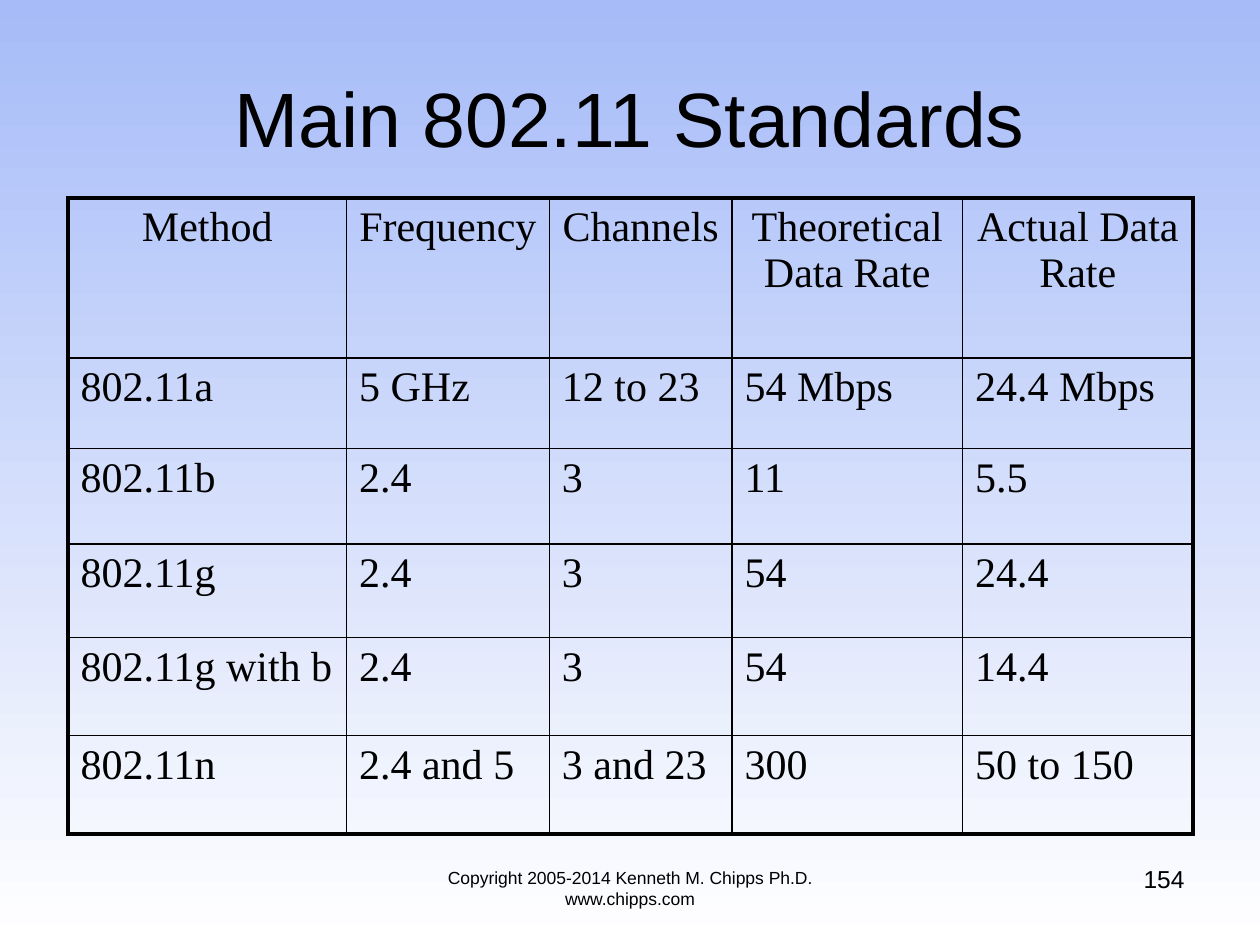
import dataclasses

import pptx
import pptx.dml.color
import pptx.enum.text
import pptx.oxml
import pptx.oxml.ns
import pptx.util

Inches = pptx.util.Inches
Pt = pptx.util.Pt
Align = pptx.enum.text.PP_ALIGN
Anchor = pptx.enum.text.MSO_ANCHOR
Color = pptx.dml.color.RGBColor


@dataclasses.dataclass(frozen=True)
class Theme:
    sky: str = "A6BBF8"
    white: str = "FFFFFF"
    ink: str = "000000"
    sans: str = "Arial"
    serif: str = "Times New Roman"
    title: float = 44
    body: float = 24
    page: float = 14
    foot: float = 10
    thick: float = 2.25
    thin: float = 1


@dataclasses.dataclass(frozen=True)
class Label:
    text: str
    left: float
    top: float
    width: float
    height: float
    size: float
    align: Align
    anchor: Anchor = Anchor.TOP


THEME = Theme()

LABELS = [
    Label("Main 802.11 Standards", 0.5, 0.3, 9, 1.25,
          THEME.title, Align.CENTER, Anchor.MIDDLE),
    Label("154", 7.17, 6.81, 2.33, 0.52, THEME.page, Align.RIGHT),
    Label("Copyright 2005-2014 Kenneth M. Chipps Ph.D. www.chipps.com",
          3, 6.83, 4, 0.52, THEME.foot, Align.CENTER),
]

ROWS = [
    ["Method", "Frequency", "Channels", "Theoretical Data Rate", "Actual Data Rate"],
    ["802.11a", "5 GHz", "12 to 23", "54 Mbps", "24.4 Mbps"],
    ["802.11b", "2.4", "3", "11", "5.5"],
    ["802.11g", "2.4", "3", "54", "24.4"],
    ["802.11g with b", "2.4", "3", "54", "14.4"],
    ["802.11n", "2.4 and 5", "3 and 23", "300", "50 to 150"],
]
WIDTHS = [2.21, 1.61, 1.45, 1.83, 1.83]
HEIGHTS = [1.27, 0.72, 0.76, 0.74, 0.78, 0.78]


def style(para, face: str, size: float, align: Align) -> None:
    para.alignment = align
    para.font.name = face
    para.font.size = Pt(size)
    para.font.color.rgb = Color.from_string(THEME.ink)


def add_label(slide, label: Label) -> None:
    box = slide.shapes.add_textbox(Inches(label.left), Inches(label.top),
                                   Inches(label.width), Inches(label.height))
    frame = box.text_frame
    frame.word_wrap = True
    frame.vertical_anchor = label.anchor
    frame.text = label.text
    style(frame.paragraphs[0], THEME.sans, label.size, label.align)


def add_edge(cell, side: str, outer: bool) -> None:
    """Draw one border of a cell; side is L, R, T or B."""
    width = Pt(THEME.thick if outer else THEME.thin)
    cell._tc.get_or_add_tcPr().append(pptx.oxml.parse_xml(
        f'<a:ln{side} {pptx.oxml.ns.nsdecls("a")} w="{width}">'
        f'<a:solidFill><a:srgbClr val="{THEME.ink}"/></a:solidFill></a:ln{side}>'))


def add_grid(slide) -> None:
    shape = slide.shapes.add_table(len(ROWS), len(WIDTHS), Inches(0.54), Inches(1.57),
                                   Inches(sum(WIDTHS)), Inches(sum(HEIGHTS)))
    table = shape.table
    table.first_row = table.horz_banding = False
    for col, width in zip(table.columns, WIDTHS):
        col.width = Inches(width)
    for row, height in zip(table.rows, HEIGHTS):
        row.height = Inches(height)
    for r, texts in enumerate(ROWS):
        for c, text in enumerate(texts):
            cell = table.cell(r, c)
            cell.text = text
            style(cell.text_frame.paragraphs[0], THEME.serif, THEME.body,
                  Align.CENTER if r == 0 else Align.LEFT)
            add_edge(cell, "L", c == 0)
            add_edge(cell, "R", c == len(WIDTHS) - 1)
            add_edge(cell, "T", r == 0)
            add_edge(cell, "B", r == len(ROWS) - 1)
            cell.fill.background()


def paint_back(slide) -> None:
    fill = slide.background.fill
    fill.gradient()
    fill.gradient_angle = 270
    for stop, tone, place in zip(fill.gradient_stops, (THEME.sky, THEME.white), (0, 1)):
        stop.color.rgb = Color.from_string(tone)
        stop.position = place


def main() -> None:
    deck = pptx.Presentation()
    deck.slide_width, deck.slide_height = Inches(10), Inches(7.5)
    slide = deck.slides.add_slide(deck.slide_layouts[6])
    paint_back(slide)
    add_grid(slide)
    for label in LABELS:
        add_label(slide, label)
    deck.save("out.pptx")


if __name__ == "__main__":
    main()
